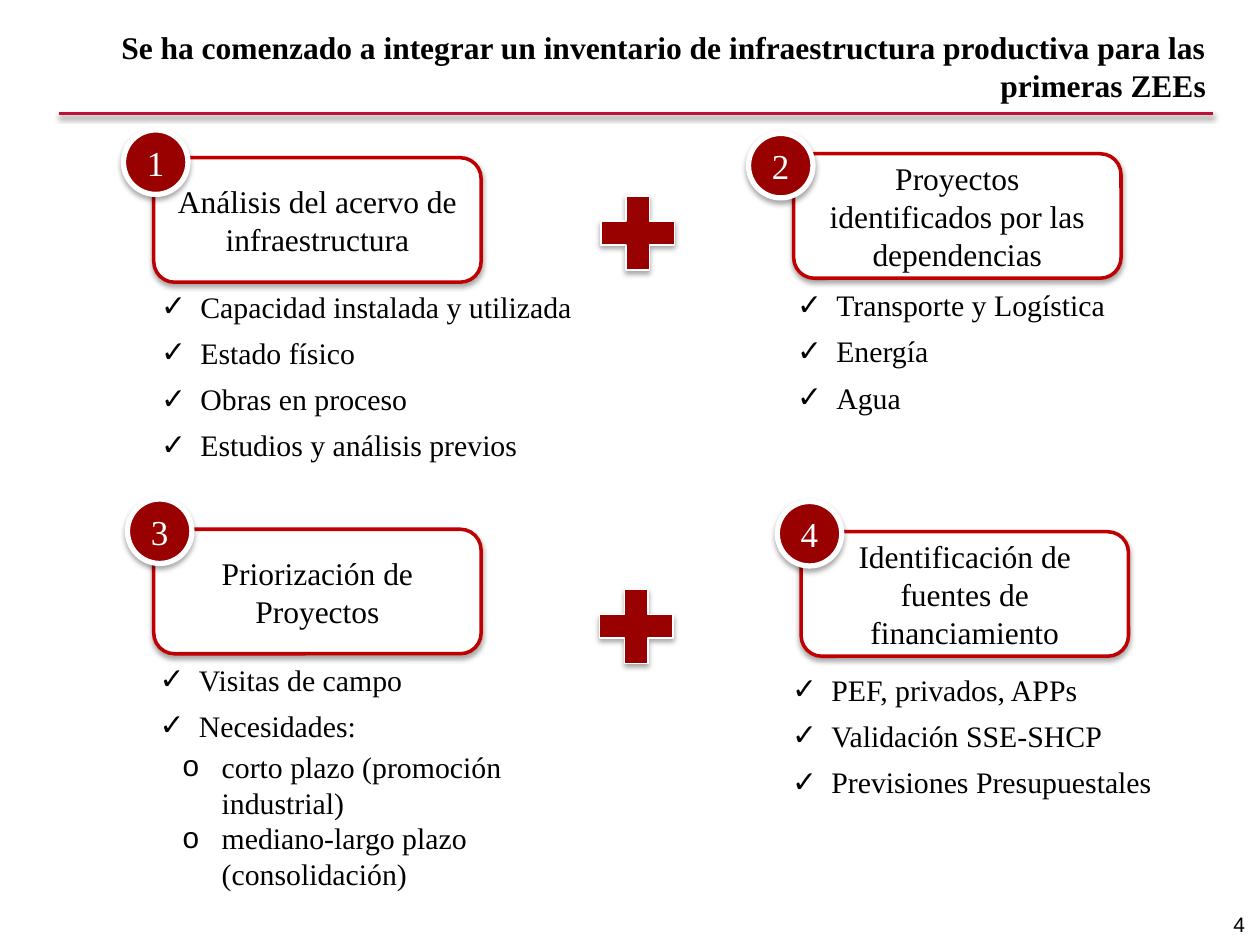
from lxml import etree
from pptx import Presentation
from pptx.dml.color import RGBColor
from pptx.enum.shapes import MSO_CONNECTOR, MSO_SHAPE
from pptx.enum.text import MSO_ANCHOR, PP_ALIGN
from pptx.oxml.ns import qn
from pptx.util import Cm, Pt

STRAIGHT = MSO_CONNECTOR.STRAIGHT
ROUNDED = MSO_SHAPE.ROUNDED_RECTANGLE
CIRCLE = MSO_SHAPE.FLOWCHART_CONNECTOR
PLUS = MSO_SHAPE.MATH_PLUS
MIDDLE, TOP = MSO_ANCHOR.MIDDLE, MSO_ANCHOR.TOP
LEFT, CENTER, RIGHT = PP_ALIGN.LEFT, PP_ALIGN.CENTER, PP_ALIGN.RIGHT

COLORS = {"text": "000000", "white": "FFFFFF", "rule": "BE0F34",
          "border": "C00000", "accent": "990000"}
SERIF, SANS = "Times New Roman", "Arial"
BOX_WIDTH, BOX_HEIGHT = 6.6, 2.51
BADGE_SIZE, PLUS_SIZE = 1.3, 2.03


class SlideBuilder:
    """Holds the slide and the style shared by its elements."""

    def __init__(self, slide):
        self.slide = slide

    def color(self, name):
        return RGBColor.from_string(COLORS[name])

    def add_shadow(self, element, opacity=35, distance=1.8):
        properties = element.spPr
        effects = properties.find(qn("a:effectLst"))
        if effects is None:
            effects = etree.SubElement(properties, qn("a:effectLst"))
        shadow = etree.SubElement(effects, qn("a:outerShdw"), blurRad=str(Pt(3.1)),
                                  dist=str(Pt(distance)), dir="5400000", rotWithShape="0")
        tint = etree.SubElement(shadow, qn("a:srgbClr"), val=COLORS["text"])
        etree.SubElement(tint, qn("a:alpha"), val=str(opacity * 1000))

    def format_text(self, frame, size, color="text", align=LEFT, anchor=MIDDLE,
                    font=SERIF, bold=False):
        frame.word_wrap = True
        frame.vertical_anchor = anchor
        for paragraph in frame.paragraphs:
            paragraph.alignment = align
            for run in paragraph.runs:
                run.font.name, run.font.size, run.font.bold = font, Pt(size), bold
                run.font.color.rgb = self.color(color)

    def text(self, left, top, width, height, content, size, **style):
        box = self.slide.shapes.add_textbox(Cm(left), Cm(top), Cm(width), Cm(height))
        box.text_frame.text = content
        self.format_text(box.text_frame, size, **style)
        return box.text_frame

    def rule(self, left, right, y):
        line = self.slide.shapes.add_connector(STRAIGHT, Cm(left), Cm(y), Cm(right), Cm(y))
        line.line.color.rgb = self.color("rule")
        line.line.width = Pt(2)
        self.add_shadow(line._element, opacity=38, distance=1.6)

    def shape(self, kind, left, top, width, height, fill, border, weight):
        shape = self.slide.shapes.add_shape(kind, Cm(left), Cm(top), Cm(width), Cm(height))
        shape.fill.solid()
        shape.fill.fore_color.rgb = self.color(fill)
        shape.line.color.rgb = self.color(border)
        shape.line.width = Pt(weight)
        shape.shadow.inherit = False
        self.add_shadow(shape._element)
        return shape

    def heading(self, left, top, content):
        box = self.shape(ROUNDED, left, top, BOX_WIDTH, BOX_HEIGHT, "white", "border", 2)
        box.text_frame.text = content
        self.format_text(box.text_frame, 18, align=CENTER)

    def badge(self, left, top, number):
        circle = self.shape(CIRCLE, left, top, BADGE_SIZE, BADGE_SIZE, "accent", "white", 3)
        circle.text_frame.text = str(number)
        self.format_text(circle.text_frame, 20, "white", CENTER)
        circle.text_frame.word_wrap = False

    def plus(self, left, top, weight):
        self.shape(PLUS, left, top, PLUS_SIZE, PLUS_SIZE, "accent", "white", weight)

    def checklist(self, left, top, width, height, items, subitems):
        frame = self.text(left, top, width, height, "\n".join(items + subitems), 17, anchor=TOP)
        for index, paragraph in enumerate(frame.paragraphs):
            nested = index >= len(items)
            paragraph.level = int(nested)
            paragraph.space_before = paragraph.space_after = Pt(0 if nested else 3)
            properties = paragraph._p.get_or_add_pPr()
            properties.set("marL", str(Cm(1.25 if nested else 0.79)))
            properties.set("indent", str(Cm(-0.79)))
            etree.SubElement(properties, qn("a:buFont"), typeface=SANS)
            etree.SubElement(properties, qn("a:buChar"), char="o" if nested else "✓")


# Each step: heading, box position, badge position, list frame, items, subitems
STEPS = [
    ("Análisis del acervo de infraestructura", (3.1, 3.18), (2.49, 2.62),
     (3, 5.69, 9.3, 4.65),
     ["Capacidad instalada y utilizada", "Estado físico", "Obras en proceso",
      "Estudios y análisis previos"], []),
    ("Proyectos identificados por las dependencias", (16, 3.1), (15.09, 2.69),
     (15.82, 5.66, 9.3, 2.87),
     ["Transporte y Logística", "Energía", "Agua"], []),
    ("Priorización de Proyectos", (3.1, 10.67), (2.57, 10.06),
     (2.97, 13.21, 7.52, 5.8),
     ["Visitas de campo", "Necesidades:"],
     ["corto plazo (promoción industrial)", "mediano-largo plazo (consolidación)"]),
    ("Identificación de fuentes de financiamiento", (16.15, 10.72), (15.67, 10.11),
     (15.72, 13.41, 9.3, 2.87),
     ["PEF, privados, APPs", "Validación SSE-SHCP", "Previsiones Presupuestales"], []),
]


def main():
    presentation = Presentation()
    presentation.slide_width, presentation.slide_height = Cm(25.4), Cm(19.05)
    builder = SlideBuilder(presentation.slides.add_slide(presentation.slide_layouts[6]))

    # Title and rule
    builder.text(0.71, 0.43, 23.85, 1.8,
                 "Se ha comenzado a integrar un inventario de infraestructura "
                 "productiva para las primeras ZEEs", 18, align=RIGHT, bold=True)
    builder.rule(1.19, 24.46, 2.29)

    # Four numbered steps
    for number, (heading, box_at, badge_at, list_frame, items, subitems) in enumerate(STEPS, 1):
        builder.heading(*box_at, heading)
        builder.badge(*badge_at, number)
        builder.checklist(*list_frame, items, subitems)

    # Plus signs between the columns
    builder.plus(11.84, 3.68, 1)
    builder.plus(11.81, 11.61, 0.75)

    # Page number
    builder.text(20.9, 18.24, 4.45, 0.76, "4", 12, align=RIGHT, font=SANS)

    presentation.save("out.pptx")


if __name__ == "__main__":
    main()
